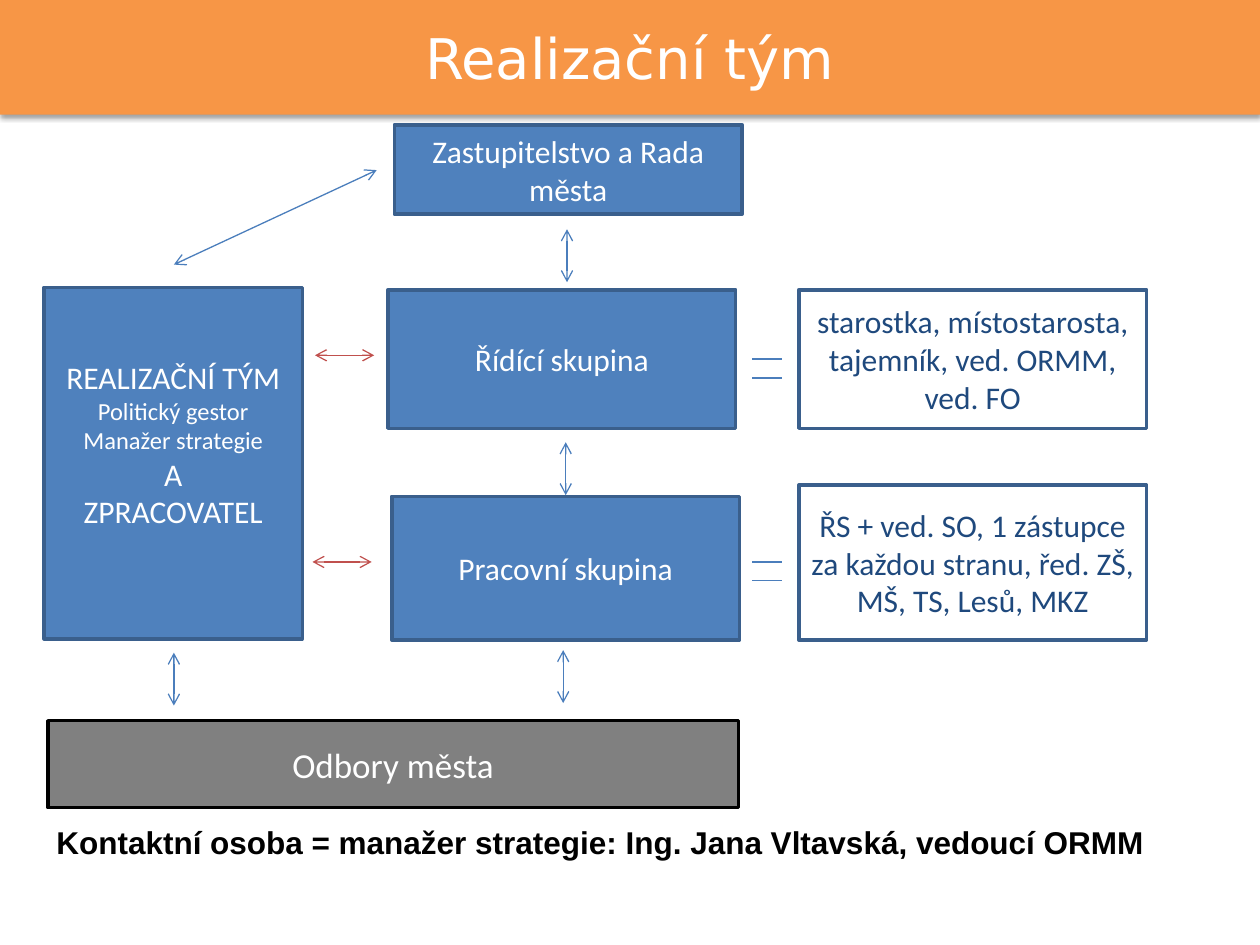
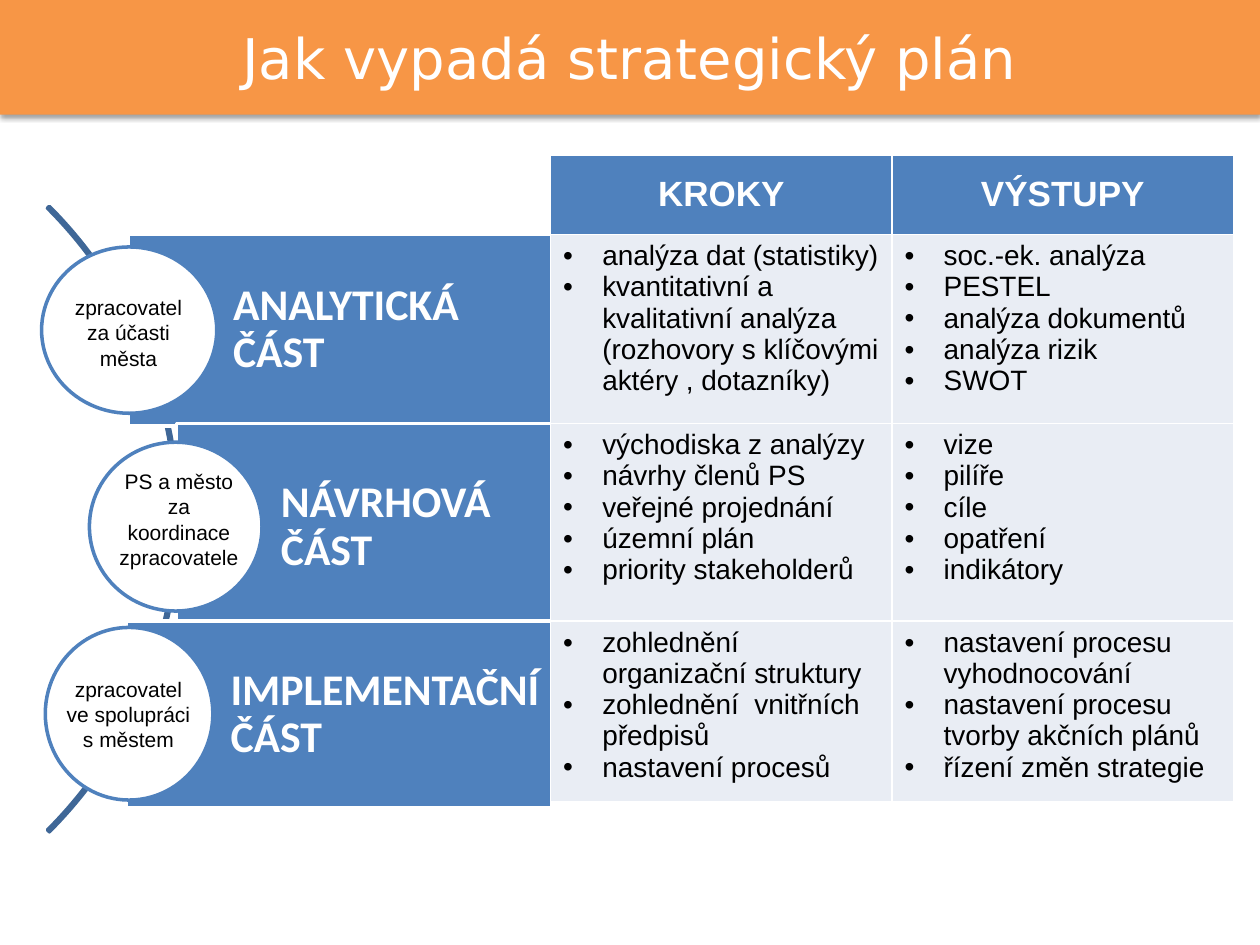
from lxml import etree
from pptx import Presentation
from pptx.dml.color import RGBColor
from pptx.enum.shapes import MSO_CONNECTOR, MSO_SHAPE
from pptx.enum.text import MSO_ANCHOR, MSO_AUTO_SIZE, PP_ALIGN
from pptx.oxml.ns import qn
from pptx.util import Inches, Pt

RECT, OVAL, ARC = MSO_SHAPE.RECTANGLE, MSO_SHAPE.OVAL, MSO_SHAPE.BLOCK_ARC
STRAIGHT = MSO_CONNECTOR.STRAIGHT
LEFT, CENTER = PP_ALIGN.LEFT, PP_ALIGN.CENTER
TOP, MIDDLE = MSO_ANCHOR.TOP, MSO_ANCHOR.MIDDLE
GROW = MSO_AUTO_SIZE.SHAPE_TO_FIT_TEXT

WHITE = RGBColor(0xFF, 0xFF, 0xFF)
BLACK = RGBColor(0x00, 0x00, 0x00)
ORANGE = RGBColor(0xF7, 0x96, 0x46)
BLUE = RGBColor(0x4F, 0x81, 0xBD)
BLUE_EDGE = RGBColor(0x3A, 0x5F, 0x8C)
BLUE_LINE = RGBColor(0x4B, 0x7E, 0xBC)
ARC_BLUE = RGBColor(0x3F, 0x67, 0x97)
NAVY = RGBColor(0x1F, 0x49, 0x7D)
RED = RGBColor(0xC0, 0x50, 0x4D)
GRAY = RGBColor(0x80, 0x80, 0x80)
PALE = RGBColor(0xE9, 0xED, 0xF4)

TITLE_FONT = {"name": "DejaVu Sans", "size": Pt(32)}
BOX_FONT = {"name": "Calibri", "size": Pt(18)}
SMALL_FONT = {"name": "Calibri", "size": Pt(14)}
DEPARTMENT_FONT = {"name": "Calibri", "size": Pt(20)}
STAGE_FONT = {"name": "Calibri", "size": Pt(25), "bold": True}
CONTACT_FONT = {"name": "Arial", "size": Pt(18), "bold": True}
NOTE_FONT = {"name": "Arial", "size": Pt(12)}
HEAD_FONT = {"name": "Arial", "size": Pt(20), "bold": True}
CELL_FONT = {"name": "Arial", "size": Pt(16), "bold": False}

TITLE_BOX = (0, 0, 10, 0.91)


# Shared helpers

def set_values(target, values):
    for key, value in values.items():
        setattr(target, key, value)


def inside(box, left, top, *size):
    """Turn a place relative to a box into lengths on the slide."""
    return [Inches(v) for v in (box[0] + left, box[1] + top, *size)]


def write(frame, lines, color, align=CENTER, anchor=MIDDLE, **frame_values):
    """Fill a text frame with (text, font values) lines."""
    set_values(frame, {"word_wrap": True, "vertical_anchor": anchor, **frame_values})
    for i, (text, font) in enumerate(lines):
        paragraph = frame.add_paragraph() if i else frame.paragraphs[0]
        paragraph.alignment = align
        run = paragraph.add_run()
        run.text = text
        set_values(run.font, font)
        run.font.color.rgb = color


def add_box(slide, place, fill=None, edge=None, kind=RECT):
    shape = slide.shapes.add_shape(kind, *place)
    shape.shadow.inherit = False
    if fill is None:
        shape.fill.background()
    else:
        shape.fill.solid()
        shape.fill.fore_color.rgb = fill
    if edge is None:
        shape.line.fill.background()
    else:
        shape.line.color.rgb = edge
        shape.line.width = Pt(2)
    return shape


def add_note(slide, place, text, font, align):
    note = slide.shapes.add_textbox(*place)
    write(note.text_frame, [(text, font)], BLACK, align, TOP, auto_size=GROW)


def add_line(slide, box, start, end, color=BLUE_LINE, arrows=True):
    line = slide.shapes.add_connector(STRAIGHT, *inside(box, *start), *inside(box, *end))
    line.line.color.rgb = color
    line.line.width = Pt(0.75)
    properties = line._element.spPr
    if arrows:
        for end_name in ("a:headEnd", "a:tailEnd"):
            etree.SubElement(properties.find(qn("a:ln")), qn(end_name), type="arrow")
    etree.SubElement(properties, qn("a:effectLst"))


def title_band(slide, box, title):
    band = add_box(slide, inside(box, 0, 0, *box[2:]), ORANGE)
    write(band.text_frame, [(title, TITLE_FONT)], WHITE)
    effects = band._element.spPr.find(qn("a:effectLst"))
    shadow = etree.SubElement(effects, qn("a:outerShdw"), blurRad=str(Pt(3.1)),
                              dist=str(Pt(1.6)), dir="5400000", rotWithShape="0")
    shade = etree.SubElement(shadow, qn("a:srgbClr"), val=str(BLACK))
    etree.SubElement(shade, qn("a:alpha"), val="38000")


# Slide 1: implementation team

def team_diagram(slide, box):
    # Team column, leaving one line free below its text
    team = add_box(slide, inside(box, 0, 1.29, 2.05, 2.79), BLUE, BLUE_EDGE)
    write(team.text_frame, [
        ("REALIZAČNÍ TÝM", BOX_FONT),
        ("Politický gestor", SMALL_FONT),
        ("Manažer strategie", SMALL_FONT),
        ("A", BOX_FONT),
        ("ZPRACOVATEL", BOX_FONT),
    ], WHITE, margin_bottom=Inches(0.35))

    # City departments
    departments = add_box(slide, inside(box, 0.03, 4.73, 5.48, 0.69), GRAY, BLACK)
    write(departments.text_frame, [("Odbory města", DEPARTMENT_FONT)], WHITE)

    # Groups and their members
    for text, left, top, height, fill, color in (
        ("Zastupitelstvo a Rada města", 2.78, 0, 0.71, BLUE, WHITE),
        ("Řídící skupina", 2.73, 1.31, 1.1, BLUE, WHITE),
        ("Pracovní skupina", 2.76, 2.95, 1.14, BLUE, WHITE),
        ("starostka, místostarosta, tajemník, ved. ORMM, ved. FO",
         5.99, 1.31, 1.1, None, NAVY),
        ("ŘS + ved. SO, 1 zástupce za každou stranu, řed. ZŠ, MŠ, TS, Lesů, MKZ",
         5.99, 2.86, 1.23, None, NAVY),
    ):
        group = add_box(slide, inside(box, left, top, 2.76, height), fill, BLUE_EDGE)
        write(group.text_frame, [(text, BOX_FONT)], color)

    # Arrows: diagonal, upright, level
    add_line(slide, box, (1.03, 1.11), (2.64, 0.36))
    for x, y in ((4.15, 0.83), (4.14, 2.52), (1.03, 4.19), (4.12, 4.17)):
        add_line(slide, box, (x, y), (x, y + 0.42))
    for x, y in ((2.15, 1.83), (2.13, 3.47)):
        add_line(slide, box, (x, y), (x + 0.47, y), RED)

    # Equals signs between groups and members
    for top in (1.86, 3.47):
        for y in (top, top + 0.15):
            add_line(slide, box, (5.62, y), (5.86, y), arrows=False)


def contact_line(slide, box):
    add_note(slide, inside(box, 0, 0, *box[2:]),
             "Kontaktní osoba = manažer strategie: Ing. Jana Vltavská, vedoucí ORMM",
             CONTACT_FONT, LEFT)


# Slide 2: strategic plan

STAGES = (  # name, bar, circle, who does it, note place
    ("ANALYTICKÁ ČÁST", (0.69, 0, 3.38, 1.52), (0, 0.1, 1.39, 1.32),
     "zpracovatel za účasti města", (0.1, 0.43, 1.18, 0.71)),
    ("NÁVRHOVÁ ČÁST", (1.07, 1.5, 3, 1.65), (0.38, 1.65, 1.37, 1.34),
     "PS a město za koordinace zpracovatele", (0.5, 1.81, 1.18, 0.91)),
    ("IMPLEMENTAČNÍ ČÁST", (0.67, 3.07, 3.38, 1.48), (0.03, 3.12, 1.33, 1.37),
     "zpracovatel ve spolupráci s městem", (0.1, 3.46, 1.18, 0.71)),
)

PLAN_ROWS = (  # steps, outputs
    (("analýza dat (statistiky)",
      "kvantitativní a kvalitativní analýza (rozhovory s klíčovými aktéry , dotazníky)"),
     ("soc.-ek. analýza", "PESTEL", "analýza dokumentů", "analýza rizik", "SWOT")),
    (("východiska z analýzy", "návrhy členů PS", "veřejné projednání",
      "územní plán", "priority stakeholderů"),
     ("vize", "pilíře", "cíle", "opatření", "indikátory")),
    (("zohlednění organizační struktury", "zohlednění  vnitřních předpisů",
      "nastavení procesů"),
     ("nastavení procesu vyhodnocování", "nastavení procesu tvorby akčních plánů",
      "řízení změn strategie")),
)


def plan_stages(slide, box):
    # Arc behind the stages
    arc = add_box(slide, inside(box, -5.93, -1.25, 7.02, 7.02), edge=ARC_BLUE, kind=ARC)
    for i, value in enumerate((189, 27, 0.003)):
        arc.adjustments[i] = value

    inset = Inches(0.07)
    for name, bar_place, circle_place, doer, note_place in STAGES:
        bar = add_box(slide, inside(box, *bar_place), BLUE, WHITE)
        write(bar.text_frame, [(name, STAGE_FONT)], WHITE, LEFT,
              margin_left=Inches(0.83), margin_right=inset,
              margin_top=inset, margin_bottom=inset)
        bar.text_frame.paragraphs[0].line_spacing = 0.9
        add_box(slide, inside(box, *circle_place), WHITE, BLUE, OVAL)
        add_note(slide, inside(box, *note_place), doer, NOTE_FONT, CENTER)


def add_bullets(cell):
    for paragraph in cell.text_frame.paragraphs:
        properties = paragraph._p.get_or_add_pPr()
        properties.set("marL", str(Inches(0.31)))
        properties.set("indent", str(Inches(-0.31)))
        etree.SubElement(properties, qn("a:buFont"), typeface="Arial")
        etree.SubElement(properties, qn("a:buChar"), char="•")


def plan_table(slide, box):
    table = slide.shapes.add_table(4, 2, *inside(box, 0, 0, *box[2:])).table
    table.horz_banding = False
    for column in table.columns:
        column.width = Inches(box[2] / 2)
    for row, height in zip(table.rows, (0.63, 1.5, 1.57, 1.33)):
        row.height = Inches(height)

    # Header row
    for c, heading in enumerate(("KROKY", "VÝSTUPY")):
        cell = table.cell(0, c)
        cell.fill.solid()
        cell.fill.fore_color.rgb = BLUE
        cell.vertical_anchor = MIDDLE
        write(cell.text_frame, [(heading, HEAD_FONT)], WHITE)

    # Bulleted rows
    for r, row_items in enumerate(PLAN_ROWS, 1):
        for c, items in enumerate(row_items):
            cell = table.cell(r, c)
            cell.fill.solid()
            cell.fill.fore_color.rgb = PALE
            cell.vertical_anchor = TOP
            write(cell.text_frame, [(item, CELL_FONT) for item in items],
                  BLACK, LEFT, TOP)
            add_bullets(cell)


def main():
    deck = Presentation()
    deck.slide_width, deck.slide_height = Inches(10), Inches(7.5)
    blank = deck.slide_layouts[6]

    team = deck.slides.add_slide(blank)
    title_band(team, TITLE_BOX, "Realizační tým")
    team_diagram(team, (0.35, 0.99, 8.75, 5.42))
    contact_line(team, (0.35, 6.48, 8.9, 0.4))

    plan = deck.slides.add_slide(blank)
    title_band(plan, TITLE_BOX, "Jak vypadá strategický plán")
    plan_stages(plan, (0.33, 1.86, 4.07, 4.55))
    plan_table(plan, (4.37, 1.23, 5.42, 5.03))

    deck.save("out.pptx")


if __name__ == "__main__":
    main()
